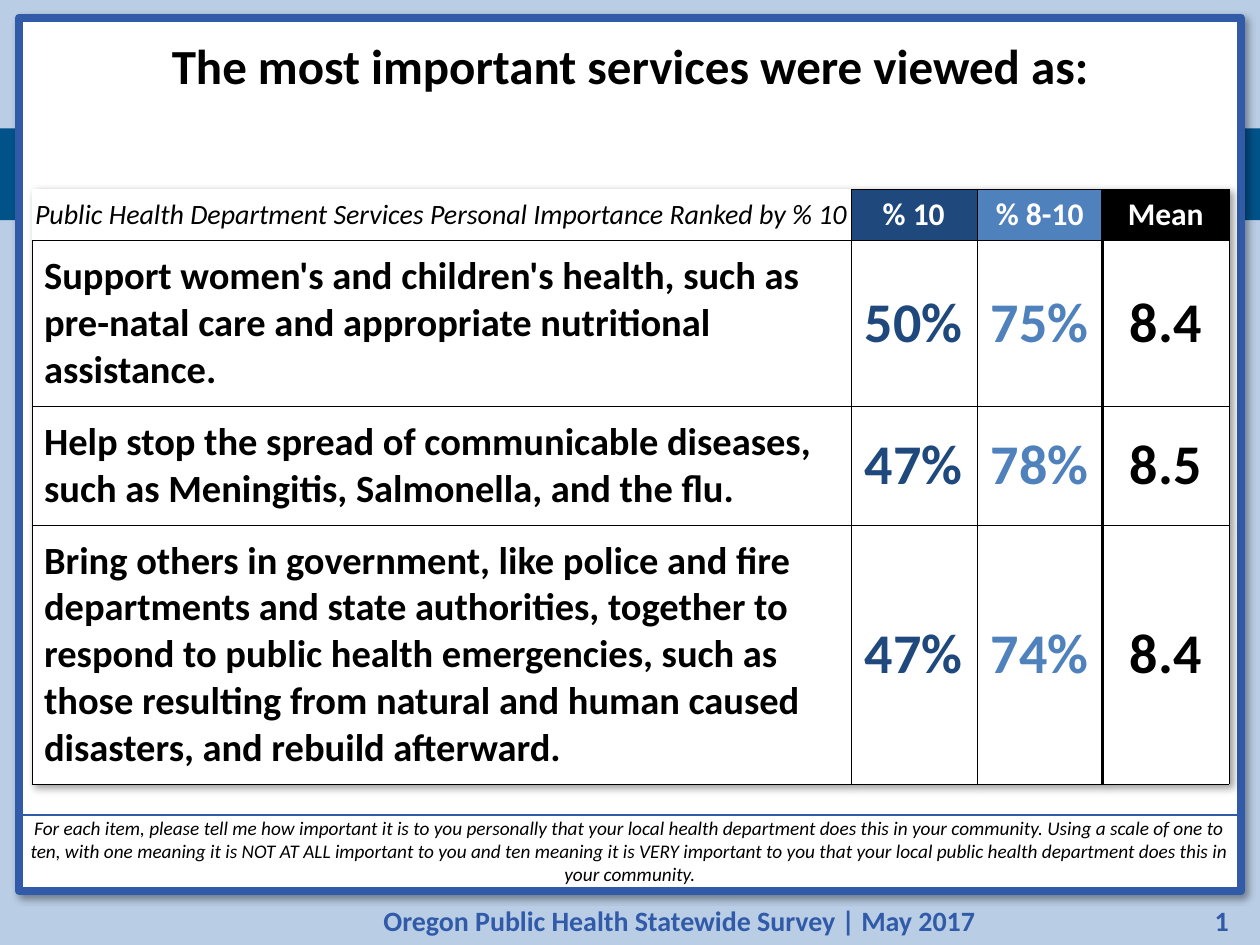
import pptx
import pptx.util
import pptx.dml.color
import pptx.enum.shapes
import pptx.enum.text
import pptx.oxml
import pptx.oxml.ns
import lxml.etree

Cm = pptx.util.Cm
Pt = pptx.util.Pt
RGBColor = pptx.dml.color.RGBColor
ALIGN = pptx.enum.text.PP_ALIGN
ANCHOR = pptx.enum.text.MSO_ANCHOR
qn = pptx.oxml.ns.qn

PALE_BLUE = RGBColor(0xB9, 0xCD, 0xE5)
BAND_BLUE = RGBColor(0x02, 0x52, 0x8A)
FRAME_BLUE = RGBColor(0x31, 0x5B, 0xA8)
NAVY = RGBColor(0x1F, 0x49, 0x7D)
MID_BLUE = RGBColor(0x4F, 0x81, 0xBD)
BLACK = RGBColor(0, 0, 0)
WHITE = RGBColor(0xFF, 0xFF, 0xFF)

FONT = "Calibri"
THIN, THICK = 0.25, 2.25
PANEL_LEFT, PANEL_TOP, PANEL_WIDTH, PANEL_HEIGHT = 0.38, 0.36, 24.64, 17.6

HEADERS = ["Public Health Department Services Personal Importance Ranked by % 10",
           "% 10", "% 8-10", "Mean"]
SERVICES = [
    ("Support women's and children's health, such as pre-natal care and "
     "appropriate nutritional assistance.", "50%", "75%", "8.4"),
    ("Help stop the spread of communicable diseases, such as Meningitis, "
     "Salmonella, and the flu.", "47%", "78%", "8.5"),
    ("Bring others in government, like police and fire departments and state "
     "authorities, together to respond to public health emergencies, such as "
     "those resulting from natural and human caused disasters, and rebuild "
     "afterward.", "47%", "74%", "8.4"),
]
COLUMN_COLORS = [BLACK, NAVY, MID_BLUE, BLACK]
COLUMN_WIDTHS = [16.51, 2.54, 2.54, 2.54]
ROW_HEIGHTS = [1.03, 3.35, 2.14, 4.98]


def write(frame, text, size, color, align=ALIGN.CENTER, bold=False, italic=False):
    frame.text = text
    frame.word_wrap = True
    paragraph = frame.paragraphs[0]
    paragraph.alignment = align
    run = paragraph.runs[0]
    run.font.name = FONT
    run.font.size = Pt(size)
    run.font.bold = bold
    run.font.italic = italic
    run.font.color.rgb = color
    return run


def set_margins(target, left, top, right, bottom):
    target.margin_left, target.margin_top = Cm(left), Cm(top)
    target.margin_right, target.margin_bottom = Cm(right), Cm(bottom)


def add_shadow(properties, position):
    effects = lxml.etree.Element(qn("a:effectLst"))
    shadow = lxml.etree.SubElement(
        effects, qn("a:outerShdw"), blurRad=str(Pt(4)), dist=str(Pt(3)),
        dir="2700000", algn="tl", rotWithShape="0")
    color = lxml.etree.SubElement(shadow, qn("a:srgbClr"), val=str(BLACK))
    lxml.etree.SubElement(color, qn("a:alpha"), val="40000")
    properties.insert(position, effects)


def add_rectangle(slide, left, top, width, height, fill=None, line=None, weight=0.75):
    rectangle = slide.shapes.add_shape(
        pptx.enum.shapes.MSO_SHAPE.RECTANGLE, Cm(left), Cm(top), Cm(width), Cm(height))
    if fill is None:
        rectangle.fill.background()
    else:
        rectangle.fill.solid()
        rectangle.fill.fore_color.rgb = fill
    if line is None:
        rectangle.line.fill.background()
    else:
        rectangle.line.color.rgb = line
        rectangle.line.width = Pt(weight)
    rectangle.shadow.inherit = False
    return rectangle


def add_panel(slide):
    panel = add_rectangle(slide, PANEL_LEFT, PANEL_TOP, PANEL_WIDTH, PANEL_HEIGHT,
                          WHITE, FRAME_BLUE, 4.5)
    properties = panel._element.spPr
    properties.remove(properties.find(qn("a:effectLst")))
    add_shadow(properties, len(properties))


def add_footer_text(slide, left, width, text, align):
    box = slide.shapes.add_textbox(Cm(left), Cm(18.08), Cm(width), Cm(0.94))
    box.text_frame.vertical_anchor = ANCHOR.MIDDLE
    return write(box.text_frame, text, 16, FRAME_BLUE, align, bold=True)


def make_slide_number(run):
    """Turn a run into a slide-number field."""
    run._r.tag = qn("a:fld")
    run._r.set("id", "{B6F15528-21DE-4FAA-801E-634DDDAF4B2B}")
    run._r.set("type", "slidenum")


def format_title(slide):
    title = slide.shapes.title
    title.left, title.top = Cm(PANEL_LEFT), Cm(PANEL_TOP)
    title.width, title.height = Cm(PANEL_WIDTH), Cm(1.75)
    frame = title.text_frame
    frame.auto_size = pptx.enum.text.MSO_AUTO_SIZE.NONE
    frame.vertical_anchor = ANCHOR.MIDDLE
    set_margins(frame, 0.1, 0.28, 0.1, 0.13)
    write(frame, "The most important services were viewed as:", 28, BLACK, bold=True)
    # The title is created first, so bring it in front of the panel.
    slide.shapes._spTree.append(title._element)


def add_question(slide):
    question = add_rectangle(slide, PANEL_LEFT, 16.43, PANEL_WIDTH, 1.55, line=FRAME_BLUE)
    frame = question.text_frame
    frame.vertical_anchor = ANCHOR.BOTTOM
    set_margins(frame, 0.18, 0, 0.18, 0.13)
    write(frame, "For each item, please tell me how important it is to you personally "
          "that your local health department does this in your community. Using a scale "
          "of one to ten, with one meaning it is NOT AT ALL important to you and ten "
          "meaning it is VERY important to you that your local public health department "
          "does this in your community.", 11, BLACK, italic=True)


def set_borders(cell, widths):
    """Draw borders from a mapping of side (L, R, T, B) to points; 0 hides a side."""
    properties = cell._tc.get_or_add_tcPr()
    for position, side in enumerate("LRTB"):
        border = lxml.etree.Element(qn("a:ln" + side), w=str(Pt(widths[side])))
        if widths[side]:
            fill = lxml.etree.SubElement(border, qn("a:solidFill"))
            lxml.etree.SubElement(fill, qn("a:srgbClr"), val=str(BLACK))
        else:
            lxml.etree.SubElement(border, qn("a:noFill"))
        properties.insert(position, border)


def fill_cell(cell, text, row, column):
    header, label = row == 0, column == 0
    cell.vertical_anchor = ANCHOR.MIDDLE
    cell.fill.solid()
    cell.fill.fore_color.rgb = COLUMN_COLORS[column] if header and not label else WHITE
    if header and label:
        set_margins(cell, 0, 0.13, 0, 0.13)
        write(cell.text_frame, text, 16, BLACK, italic=True)
    elif header:
        write(cell.text_frame, text, 18, WHITE, bold=True)
    elif label:
        write(cell.text_frame, text, 22, BLACK, ALIGN.LEFT, bold=True)
    else:
        write(cell.text_frame, text, 32, COLUMN_COLORS[column], bold=True)
    if not (header and label):
        set_margins(cell, 0.25, 0.25, 0.25, 0.25) if label else set_margins(
            cell, 0, 0.13, 0, 0.13)
    outer = 0 if header and label else THIN
    set_borders(cell, {"L": THICK if column == 3 else outer,
                       "R": THICK if column == 2 else THIN,
                       "T": outer, "B": THIN})


def add_services_table(slide):
    rows = [HEADERS, *SERVICES]
    table = slide.shapes.add_table(
        len(rows), len(HEADERS), Cm(0.64), Cm(3.81),
        Cm(sum(COLUMN_WIDTHS)), Cm(sum(ROW_HEIGHTS))).table
    table.horz_banding = False
    add_shadow(table._tbl.tblPr, 0)
    for column, width in zip(table.columns, COLUMN_WIDTHS):
        column.width = Cm(width)
    for row, height in zip(table.rows, ROW_HEIGHTS):
        row.height = Cm(height)
    for r, texts in enumerate(rows):
        for c, text in enumerate(texts):
            fill_cell(table.cell(r, c), text, r, c)


def main():
    presentation = pptx.Presentation()
    presentation.slide_width, presentation.slide_height = Cm(25.4), Cm(19.05)
    slide = presentation.slides.add_slide(presentation.slide_layouts[5])
    slide.background.fill.solid()
    slide.background.fill.fore_color.rgb = PALE_BLUE
    add_rectangle(slide, 0, 2.59, 25.4, 1.85, BAND_BLUE)
    add_footer_text(slide, 4.11, 19.18,
                    "Oregon Public Health Statewide Survey | May 2017", ALIGN.CENTER)
    make_slide_number(add_footer_text(slide, 23.29, 1.73, "11", ALIGN.RIGHT))
    add_panel(slide)
    add_question(slide)
    format_title(slide)
    add_services_table(slide)
    presentation.save("out.pptx")


if __name__ == "__main__":
    main()
